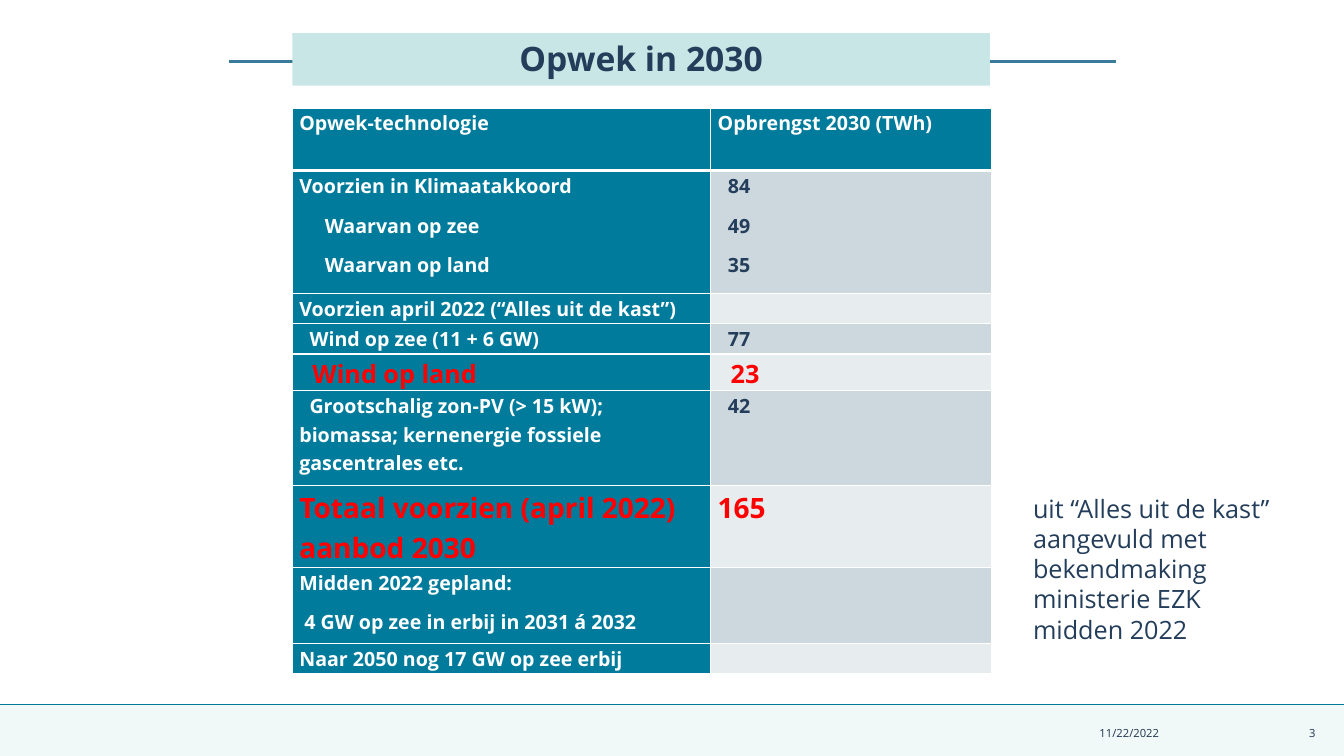
"""Builds a slide with the expected Dutch power generation in 2030."""
from dataclasses import dataclass

from lxml import etree
from pptx import Presentation
from pptx import util as u
from pptx.dml.color import RGBColor
from pptx.enum import shapes, text
from pptx.oxml.ns import qn


@dataclass(frozen=True)
class Theme:
    font: str = "Open Sans"
    navy: str = "233D5A"
    footer_ink: str = "1D344D"
    teal: str = "007B9B"
    rule: str = "387B9A"
    mint: str = "C8E6E5"
    pale: str = "E4F3F3"
    bands: tuple = ("E7ECEF", "CCD7DE")
    white: str = "FFFFFF"
    red: str = "FF0000"
    title: int = 24
    total: int = 20
    large: int = 18
    body: int = 14
    small: int = 8
    space_width: float = 0.26


class SlideBuilder:
    COLUMNS, ROWS = 32, 18

    def __init__(self, deck, theme):
        self.deck, self.theme = deck, theme
        self.page = deck.slides.add_slide(deck.slide_layouts[5])

    def x(self, columns):
        return round(self.deck.slide_width * columns / self.COLUMNS)

    def y(self, rows):
        return round(self.deck.slide_height * rows / self.ROWS)

    def area(self, left, top, width, height):
        return self.x(left), self.y(top), self.x(width), self.y(height)

    def paint(self, item, colour):
        item.fill.solid()
        item.fill.fore_color.rgb = RGBColor.from_string(colour)

    def style(self, para, size, colour, bold=False):
        for span in para.runs:
            span.font.name = self.theme.font
            span.font.size = u.Pt(size)
            span.font.bold = bold
            span.font.color.rgb = RGBColor.from_string(colour)

    def line(self, left, right, row, colour, width):
        rule = self.page.shapes.add_connector(
            shapes.MSO_CONNECTOR.STRAIGHT, self.x(left), self.y(row), self.x(right), self.y(row))
        rule.line.color.rgb = RGBColor.from_string(colour)
        rule.line.width = u.Pt(width)
        etree.SubElement(rule._element.spPr, qn("a:effectLst"))

    def band(self, area, colour, opacity):
        band = self.page.shapes.add_shape(shapes.MSO_SHAPE.RECTANGLE, *self.area(*area))
        band.shadow.inherit = False
        self.paint(band, colour)
        band.line.fill.background()
        tint = band._element.spPr.find(".//" + qn("a:srgbClr"))
        etree.SubElement(tint, qn("a:alpha"), val=str(opacity * 1000))

    def title(self, wording, area):
        box = self.page.shapes.title
        box.left, box.top, box.width, box.height = self.area(*area)
        self.paint(box, self.theme.mint)
        frame = box.text_frame
        frame.text = wording
        frame.vertical_anchor = text.MSO_ANCHOR.MIDDLE
        frame.margin_left = frame.margin_right = frame.margin_bottom = 0
        frame.margin_top = u.Inches(0.03)
        para = frame.paragraphs[0]
        para.alignment = text.PP_ALIGN.CENTER
        para.line_spacing = 0.9
        self.style(para, self.theme.title, self.theme.navy, bold=True)
        self.page.shapes._spTree.append(box._element)

    def text(self, wording, area, size, colour):
        frame = self.page.shapes.add_textbox(*self.area(*area)).text_frame
        frame.word_wrap = True
        frame.text = wording
        self.style(frame.paragraphs[0], size, colour)
        return frame

    def footer(self, wording, left, width):
        frame = self.text(wording, (left, 16.97, width, 0.96),
                          self.theme.small, self.theme.footer_ink)
        frame.margin_left = frame.margin_right = frame.margin_top = frame.margin_bottom = 0
        frame.vertical_anchor = text.MSO_ANCHOR.MIDDLE
        frame.paragraphs[0].alignment = text.PP_ALIGN.RIGHT

    def borders(self, cell, bottom):
        properties = cell._tc.get_or_add_tcPr()
        for side, width in (("L", 1), ("R", 1), ("T", 1), ("B", bottom)):
            edge = etree.SubElement(properties, qn("a:ln" + side), w=str(u.Pt(width)))
            fill = etree.SubElement(edge, qn("a:solidFill"))
            etree.SubElement(fill, qn("a:srgbClr"), val=self.theme.white)

    def cell(self, cell, lines, size, colour, fill, bottom):
        self.borders(cell, bottom)
        self.paint(cell, fill)
        cell.margin_left = cell.margin_right = u.Inches(0.07)
        cell.margin_top = cell.margin_bottom = 0
        frame = cell.text_frame
        frame.text = "\n".join(wording for indent, wording in lines)
        if not lines:
            etree.SubElement(frame.paragraphs[0]._p, qn("a:endParaRPr"), sz=str(size * 100))
        for para, (indent, wording) in zip(frame.paragraphs, lines):
            para.line_spacing = 1.07
            para.space_after = u.Pt(8)
            first_line = u.Pt(indent * size * self.theme.space_width)
            para._p.get_or_add_pPr().set("indent", str(first_line))
            self.style(para, size, colour, bold=True)

    def table(self, left, top, widths, rows):
        area = self.area(left, top, sum(widths), sum(row[0] for row in rows))
        table = self.page.shapes.add_table(len(rows), len(widths), *area).table
        table.horz_banding = False
        for column, width in zip(table.columns, widths):
            column.width = self.x(width)
        for number, (height, size, accent, labels, values) in enumerate(rows):
            table.rows[number].height = self.y(height)
            header = number == 0
            value_fill = self.theme.teal if header else self.theme.bands[number % 2]
            value_ink = accent or (self.theme.white if header else self.theme.navy)
            bottom = 3 if header else 1
            self.cell(table.cell(number, 0), labels, size, accent or self.theme.white,
                      self.theme.teal, bottom)
            self.cell(table.cell(number, 1), values, size, value_ink, value_fill, bottom)


def main():
    theme = Theme()
    deck = Presentation()
    deck.slide_width, deck.slide_height = u.Inches(13.33), u.Inches(7.5)
    slide = SlideBuilder(deck, theme)

    slide.band((0, 16.78, 32, 1.22), theme.pale, 50)
    slide.line(0, 32, 16.78, theme.teal, 1)
    slide.line(5.45, 26.57, 1.46, theme.rule, 2.25)
    slide.title("Opwek in 2030", (6.96, 0.79, 16.61, 1.25))

    single = 0.72
    slide.table(6.96, 2.57, (9.96, 6.7), [
        (1.49, theme.body, None, [(0, "Opwek-technologie")], [(0, "Opbrengst 2030 (TWh)")]),
        (2.93, theme.body, None,
         [(0, "Voorzien in Klimaatakkoord"), (5, "Waarvan op zee"), (5, "Waarvan op land")],
         [(2, "84"), (2, "49"), (2, "35")]),
        (single, theme.body, None, [(0, "Voorzien april 2022 (“Alles uit de kast”)")], []),
        (single, theme.body, None, [(2, "Wind op zee (11 + 6 GW)")], [(2, "77")]),
        (single, theme.large, theme.red, [(2, "Wind op land")], [(2, "23")]),
        (2.26, theme.body, None,
         [(2, "Grootschalig zon-PV (> 15 kW); biomassa; kernenergie fossiele gascentrales etc.")],
         [(2, "42")]),
        (1.49, theme.total, theme.red,
         [(0, "Totaal voorzien (april 2022) aanbod 2030")], [(0, "165")]),
        (1.82, theme.body, None,
         [(0, "Midden 2022 gepland:"), (1, "4 GW op zee in erbij in 2031 á 2032")], []),
        (single, theme.body, None, [(0, "Naar 2050 nog 17 GW op zee erbij")], []),
    ])

    slide.footer("11/22/2022", 22.01, 5.59)
    slide.footer("3", 30.17, 1.15)
    slide.text("uit “Alles uit de kast” aangevuld met bekendmaking ministerie EZK midden 2022",
               (24.36, 11.62, 6.24, 3.89), theme.large, theme.navy)
    deck.save("out.pptx")


if __name__ == "__main__":
    main()
